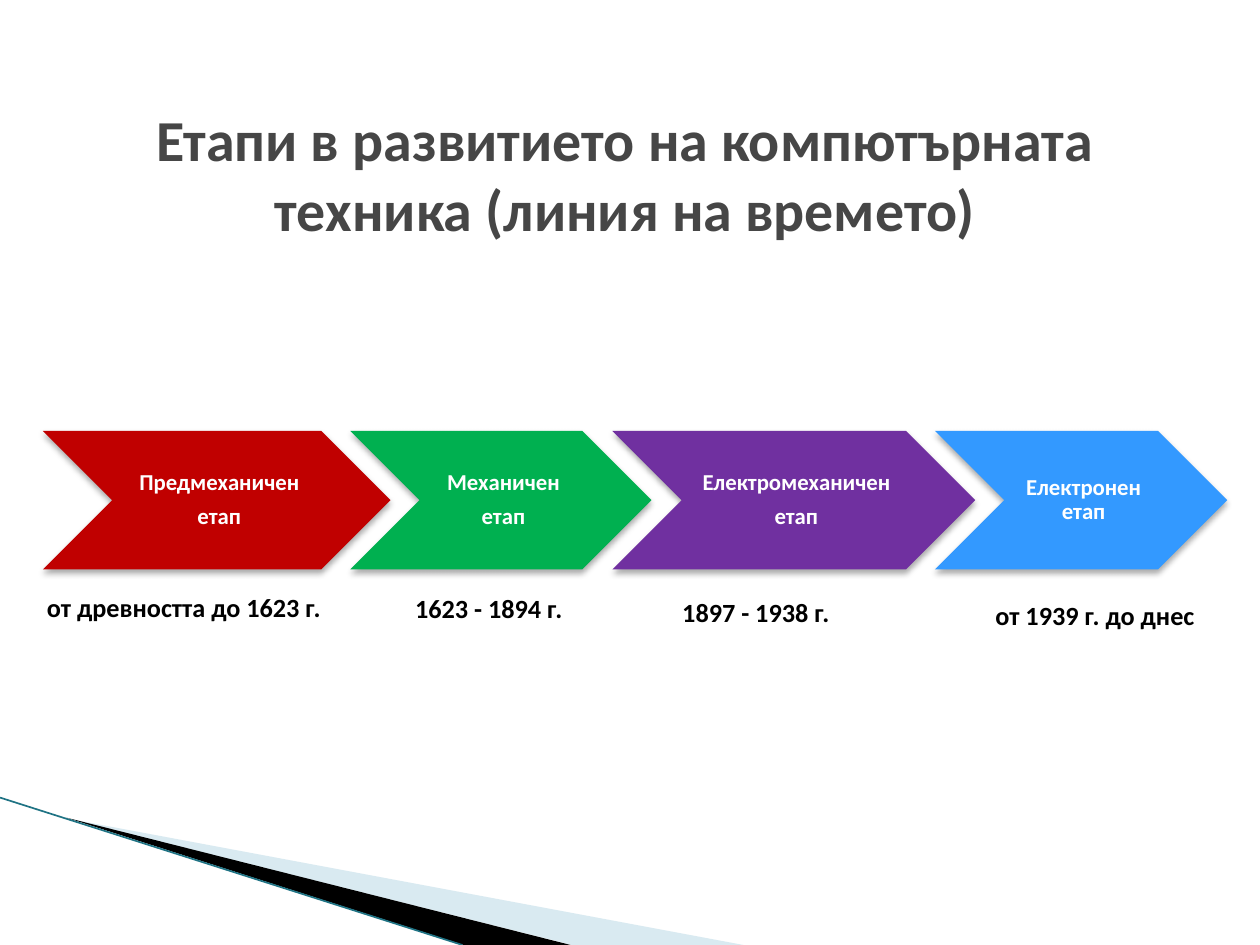
from lxml.etree import SubElement
from pptx import Presentation
from pptx.dml.color import RGBColor
from pptx.enum.shapes import MSO_CONNECTOR, MSO_SHAPE
from pptx.enum.text import MSO_ANCHOR, PP_ALIGN
from pptx.oxml.ns import qn
from pptx.util import Inches, Pt

COLORS = {
    "title": "464646", "date": "000000", "label": "FFFFFF",
    "red": "C00000", "green": "00B050", "purple": "7030A0", "blue": "3399FF",
    "pale": "A0CBDC", "black": "000000", "edge": "1F7384",
}


class Deck:
    """Holds the style and the current slide."""

    def __init__(self, prs, font):
        self.font = font
        self.slide = prs.slides.add_slide(prs.slide_layouts[6])

    def color(self, name):
        return RGBColor.from_string(COLORS[name])

    def paint(self, sp, name, alpha=None):
        sp.shadow.inherit = False
        sp.fill.solid()
        sp.fill.fore_color.rgb = self.color(name)
        sp.line.fill.background()
        if alpha:
            clr = sp._element.spPr.find(qn("a:solidFill")).find(qn("a:srgbClr"))
            SubElement(clr, qn("a:alpha"), val=str(alpha * 1000))

    def add_lines(self, tf, lines, size, color, **spacing):
        for i, line in enumerate(lines):
            p = tf.paragraphs[0] if i == 0 else tf.add_paragraph()
            p.alignment = PP_ALIGN.CENTER
            for name, value in spacing.items():
                setattr(p, name, value)
            r = p.add_run()
            r.text = line
            style = {"name": self.font, "size": Pt(size), "bold": True}
            for name, value in style.items():
                setattr(r.font, name, value)
            r.font.color.rgb = self.color(color)

    def text(self, box, line, size, color, anchor=MSO_ANCHOR.TOP):
        tf = self.slide.shapes.add_textbox(*map(Inches, box)).text_frame
        tf.word_wrap = True
        tf.vertical_anchor = anchor
        self.add_lines(tf, [line], size, color)

    def chevron(self, box, lines, color):
        sp = self.slide.shapes.add_shape(MSO_SHAPE.CHEVRON, *map(Inches, box))
        self.paint(sp, color)
        # Soft shadow straight below
        effects = sp._element.spPr.find(qn("a:effectLst"))
        shadow = SubElement(effects, qn("a:outerShdw"), blurRad=str(Pt(3.5)),
                            dist=str(Pt(2.2)), dir="5400000", rotWithShape="0")
        clr = SubElement(shadow, qn("a:srgbClr"), val=COLORS["black"])
        SubElement(clr, qn("a:alpha"), val="32000")

        tf = sp.text_frame
        frame = {"word_wrap": True, "vertical_anchor": MSO_ANCHOR.MIDDLE,
                 "margin_left": Inches(0.06), "margin_right": Inches(0.02),
                 "margin_top": Inches(0.02), "margin_bottom": Inches(0.02)}
        for name, value in frame.items():
            setattr(tf, name, value)
        self.add_lines(tf, lines, 13, "label", line_spacing=0.9,
                       space_after=Pt(5))

    def wedge(self, points, color, alpha=None):
        start, *rest = [(Inches(x), Inches(y)) for x, y in points]
        fb = self.slide.shapes.build_freeform(*start)
        fb.add_line_segments(rest, close=True)
        self.paint(fb.convert_to_shape(), color, alpha)

    def line(self, start, end, color, width):
        cx = self.slide.shapes.add_connector(
            MSO_CONNECTOR.STRAIGHT, *map(Inches, start + end))
        cx.line.color.rgb = self.color(color)
        cx.line.width = Pt(width)
        SubElement(cx._element.spPr, qn("a:effectLst"))


def main():
    prs = Presentation()
    prs.slide_width, prs.slide_height = Inches(10), Inches(7.5)
    deck = Deck(prs, "Calibri")

    # Corner decoration
    deck.wedge([(0.55, 6.5), (5.9, 7.5), (4.54, 7.5)], "pale", alpha=40)
    deck.wedge([(0.53, 6.49), (4.53, 7.5), (3.68, 7.5)], "black")
    deck.line((0, 6.33), (3.67, 7.5), "edge", 0.95)

    # Title
    deck.text((0.71, 0.75, 8.5, 1.25),
              "Етапи в развитието на компютърната техника (линия на времето)",
              33.1, "title", MSO_ANCHOR.MIDDLE)

    # Timeline: left, width, label, colour, then date box and date
    stages = [
        (0.34, 2.76, ["Предмеханичен", "етап"], "red",
         (0.26, 4.64, 2.4, 0.35), "от древността до 1623 г."),
        (2.78, 2.39, ["Механичен", "етап"], "green",
         (3, 4.65, 1.76, 0.35), "1623 - 1894 г."),
        (4.86, 2.88, ["Електромеханичен", "етап"], "purple",
         (5.03, 4.68, 1.94, 0.42), "1897 - 1938 г."),
        (7.42, 2.32, ["Електронен етап"], "blue",
         (7.63, 4.71, 2.12, 0.43), "от 1939 г. до днес"),
    ]
    for left, width, label, color, date_box, date in stages:
        deck.chevron((left, 3.42, width, 1.1), label, color)
        deck.text(date_box, date, 15, "date")

    prs.save("out.pptx")


if __name__ == "__main__":
    main()
